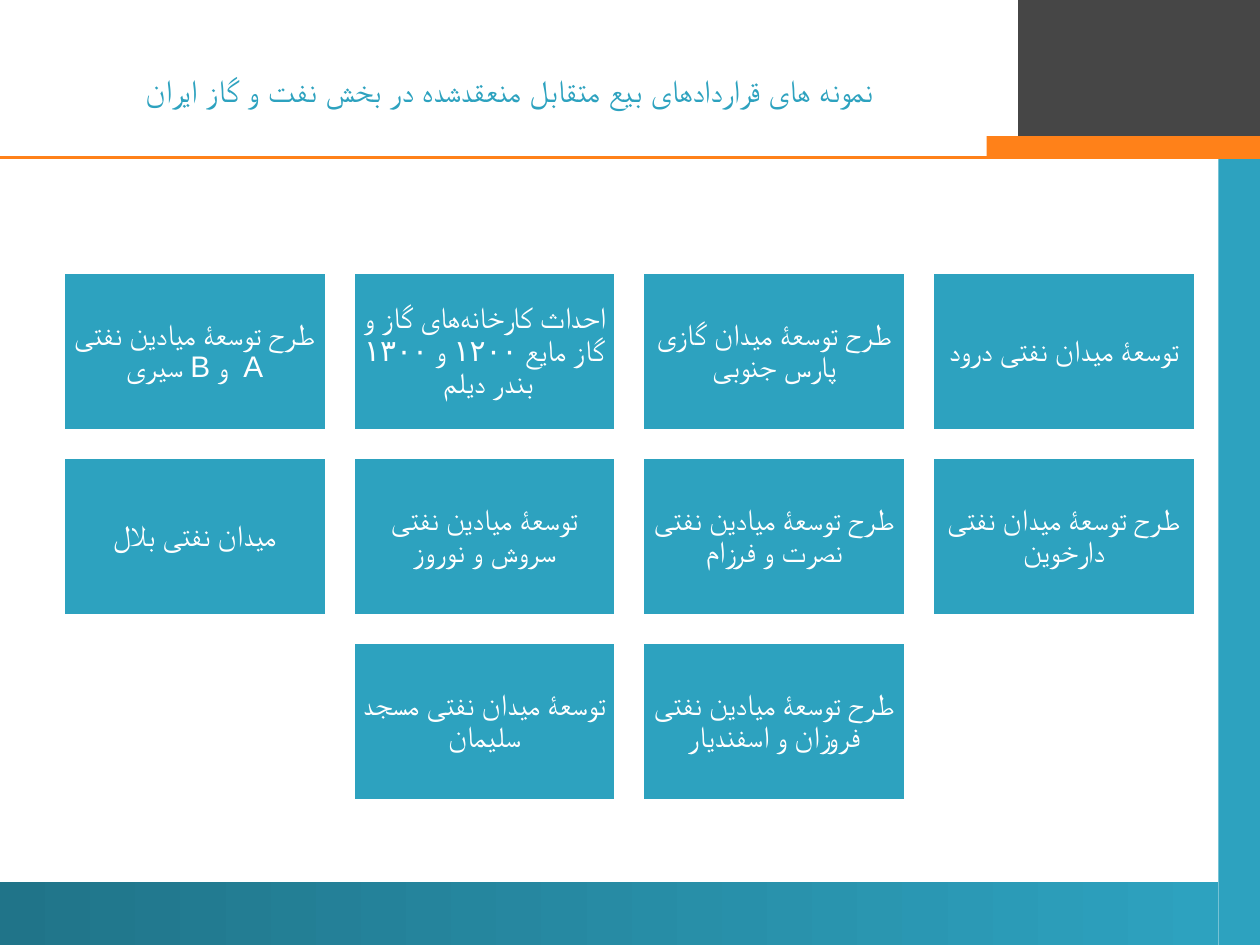
from dataclasses import dataclass
from typing import Optional

from lxml.etree import SubElement
from pptx import Presentation
from pptx.dml.color import RGBColor
from pptx.enum.shapes import MSO_CONNECTOR as Connector, MSO_SHAPE as Shape
from pptx.enum.text import MSO_ANCHOR as Anchor, PP_ALIGN as Align
from pptx.oxml.ns import qn
from pptx.util import Inches, Pt

WIDTH, HEIGHT = 10, 7.5
FONT = "Arial"
NON_JOINER = chr(0x200C)
COLORS = {
    "teal": "2DA2BF",
    "deep_teal": "207489",
    "orange": "FF8119",
    "charcoal": "464646",
    "white": "FFFFFF",
}


@dataclass(frozen=True)
class Box:
    left: float
    top: float
    width: float
    height: float

    def emu(self) -> tuple:
        return tuple(Inches(v) for v in (self.left, self.top, self.width, self.height))


@dataclass(frozen=True)
class Grid:
    left: float
    top: float
    cell_width: float
    cell_height: float
    gap: float

    def cell(self, column: int, row: int) -> Box:
        return Box(
            self.left + column * (self.cell_width + self.gap),
            self.top + row * (self.cell_height + self.gap),
            self.cell_width,
            self.cell_height,
        )


@dataclass(frozen=True)
class Band:
    box: Box
    color: str
    end_color: Optional[str] = None


@dataclass(frozen=True)
class ProjectRow:
    first_column: int
    projects: tuple


CARD_GRID = Grid(left=0.5, top=2.16, cell_width=2.09, cell_height=1.26, gap=0.21)
EDGE = 9.67
RULE_Y = HEIGHT / 6

BANDS = (
    Band(Box(EDGE, 0.25, WIDTH - EDGE, HEIGHT - 0.25), "teal"),
    Band(Box(0, 7, EDGE, 0.5), "deep_teal", "teal"),
    Band(Box(8.08, 0, WIDTH - 8.08, 1.08), "charcoal"),
    Band(Box(7.83, 1.08, WIDTH - 7.83, 0.17), "orange"),
)

TITLE = " نمونه های قراردادهای بیع متقابل منعقدشده در بخش نفت و گاز ایران"
PROJECT_ROWS = (
    ProjectRow(0, (
        "طرح توسعۀ میادین نفتی A  و B سیری",
        f"احداث کارخانه{NON_JOINER}های گاز و گاز مایع ۱۲۰۰ و ۱۳۰۰ بندر دیلم ",
        "طرح توسعۀ میدان گازی پارس جنوبی",
        "توسعۀ میدان نفتی درود",
    )),
    ProjectRow(0, (
        "میدان نفتی بلال",
        "توسعۀ میادین نفتی سروش و نوروز",
        "طرح توسعۀ میادین نفتی نصرت و فرزام",
        "طرح توسعۀ میدان نفتی دارخوین",
    )),
    ProjectRow(1, (
        "توسعۀ میدان نفتی مسجد سلیمان",
        "طرح توسعۀ میادین نفتی فروزان و اسفندیار",
    )),
)


def rgb(name: str) -> RGBColor:
    return RGBColor.from_string(COLORS[name])


def write(shape, text: str, *, size: float, color: str, inset: float,
          spacing: float = 1.0, script_font: Optional[str] = None,
          language: Optional[str] = None) -> None:
    frame = shape.text_frame
    frame.word_wrap = True
    frame.vertical_anchor = Anchor.MIDDLE
    frame.margin_left = frame.margin_right = Inches(inset)
    frame.margin_top = frame.margin_bottom = Inches(0.07)
    paragraph = frame.paragraphs[0]
    paragraph.alignment = Align.CENTER
    paragraph.line_spacing = spacing
    paragraph._p.get_or_add_pPr().set("rtl", "1")
    run = paragraph.add_run()
    run.text = text
    run.font.size = Pt(size)
    run.font.name = FONT
    run.font.color.rgb = rgb(color)
    properties = run._r.get_or_add_rPr()
    if language:
        properties.set("lang", language)
    if script_font:
        SubElement(properties, qn("a:cs")).set("typeface", script_font)


def draw_rectangle(slide, box: Box, color: str, end_color: Optional[str] = None):
    rectangle = slide.shapes.add_shape(Shape.RECTANGLE, *box.emu())
    rectangle.shadow.inherit = False
    rectangle.line.fill.background()
    if end_color:
        rectangle.fill.gradient()
        rectangle.fill.gradient_angle = 0
        for stop, name in zip(rectangle.fill.gradient_stops, (color, end_color)):
            stop.color.rgb = rgb(name)
    else:
        rectangle.fill.solid()
        rectangle.fill.fore_color.rgb = rgb(color)
    return rectangle


def draw_rule(slide, y: float) -> None:
    rule = slide.shapes.add_connector(
        Connector.STRAIGHT, Inches(WIDTH), Inches(y), Inches(0), Inches(y))
    rule.line.color.rgb = rgb("orange")
    rule.line.width = Pt(2.25)
    SubElement(rule._element.spPr, qn("a:effectLst"))


def draw_card(slide, box: Box, project: str) -> None:
    card = draw_rectangle(slide, box, "teal")
    card.line.color.rgb = rgb("white")
    card.line.width = Pt(2)
    write(card, project, size=17, color="white", inset=0.07, spacing=0.9,
          language="fa-IR")


def main() -> None:
    deck = Presentation()
    deck.slide_width, deck.slide_height = Inches(WIDTH), Inches(HEIGHT)
    slide = deck.slides.add_slide(deck.slide_layouts[6])

    for band in BANDS:
        draw_rectangle(slide, band.box, band.color, band.end_color)
    draw_rule(slide, RULE_Y)

    heading = slide.shapes.add_textbox(*Box(0.33, 0.25, 7.5, 0.92).emu())
    write(heading, TITLE, size=18, color="teal", inset=0.1, script_font=FONT)

    for row, project_row in enumerate(PROJECT_ROWS):
        for column, project in enumerate(project_row.projects, project_row.first_column):
            draw_card(slide, CARD_GRID.cell(column, row), project)

    deck.save("out.pptx")


if __name__ == "__main__":
    main()
